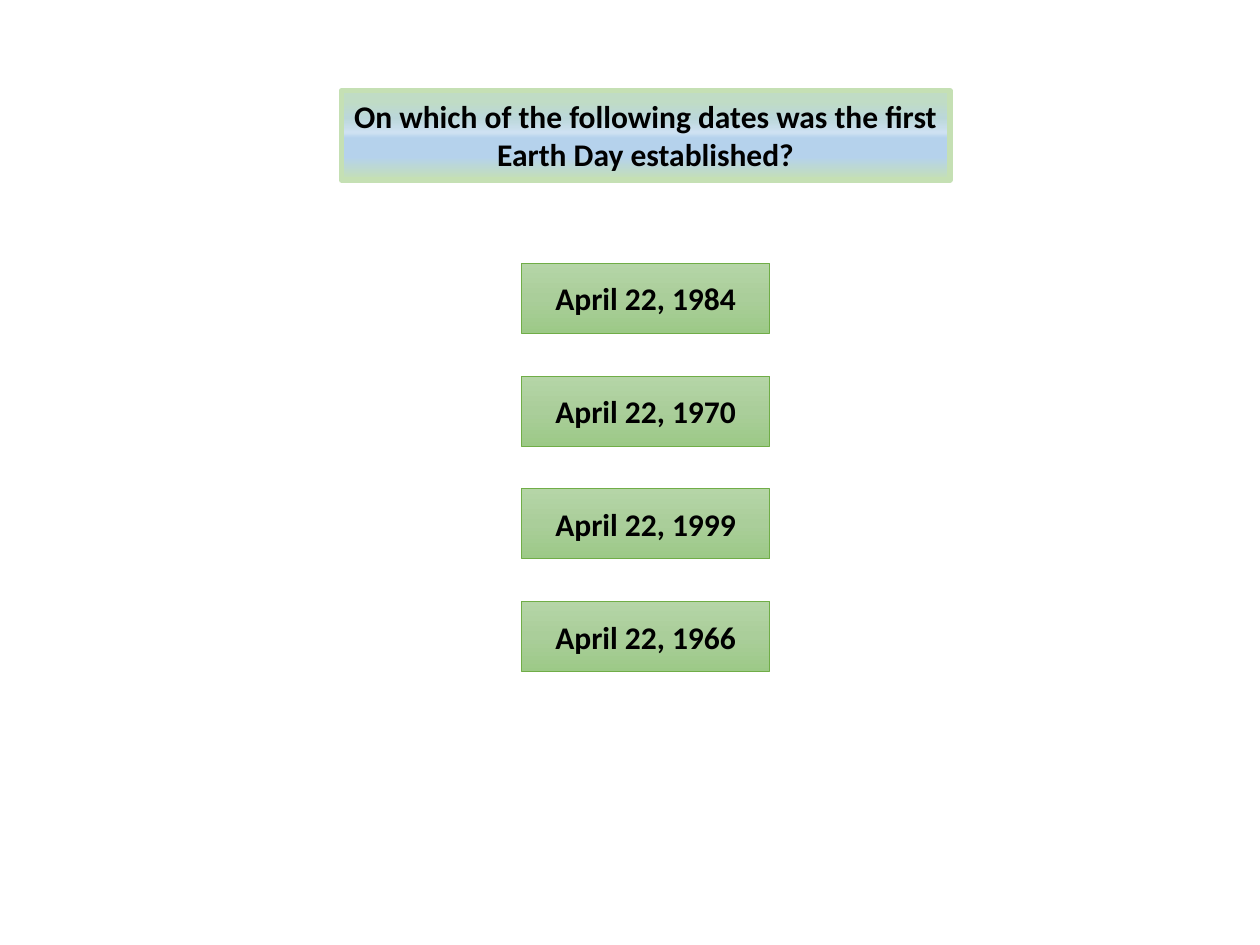
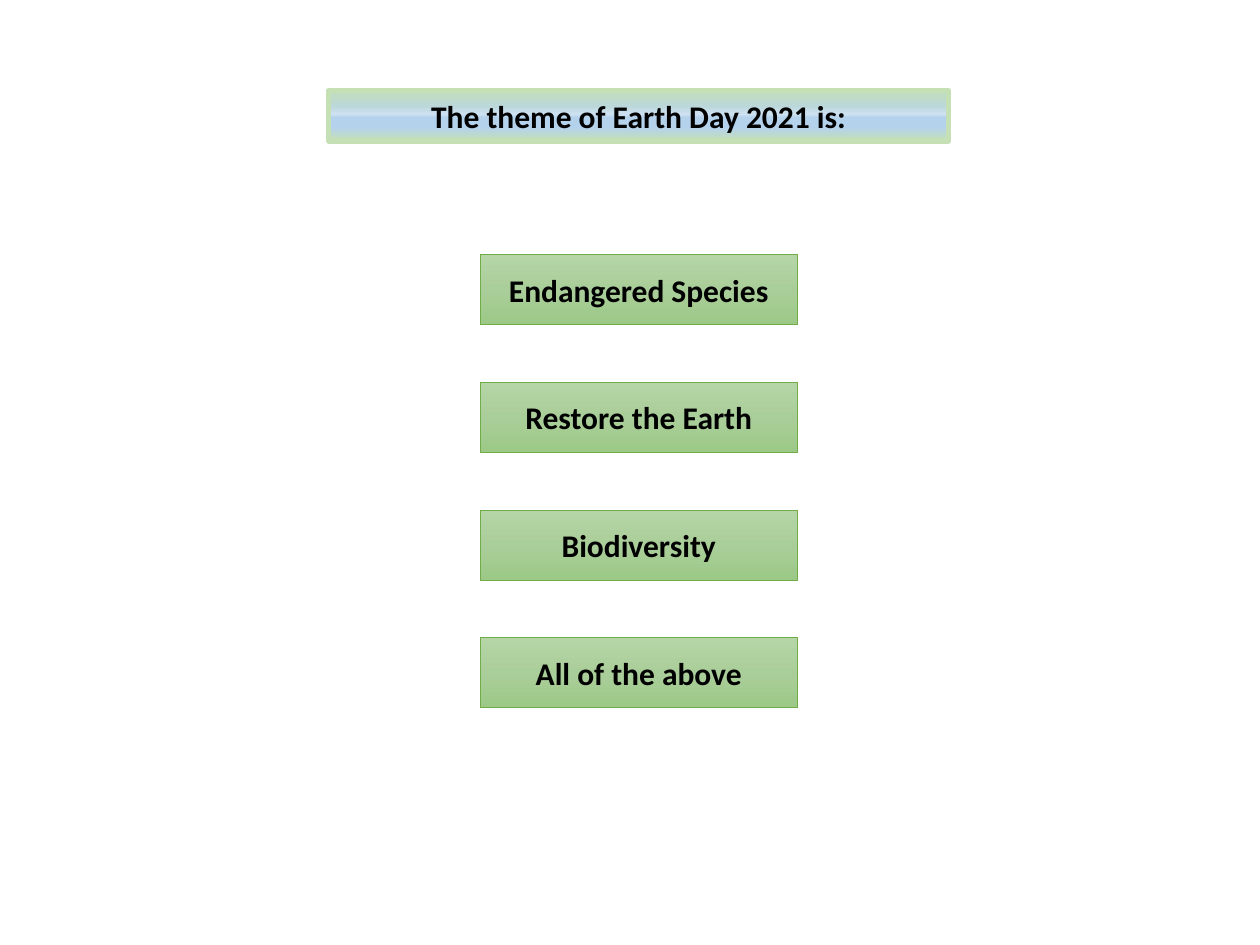
from lxml import etree
from pptx import Presentation
from pptx.dml.color import RGBColor
from pptx.enum import shapes, text
from pptx.oxml.ns import qn
from pptx.util import Pt

# Content: each question with its place and its column of answers
QUIZ = [
    {
        "question": "On which of the following dates was the first Earth Day established?",
        "question_box": (195.12, 51.84, 347.76, 51.12),
        "answers": ["April 22, 1984", "April 22, 1970", "April 22, 1999", "April 22, 1966"],
        "answer_left": 298.08, "answer_top": 150.48, "answer_width": 141.84, "answer_step": 64.4,
    },
    {
        "question": "The theme of Earth Day 2021 is:",
        "question_box": (187.92, 51.84, 354.24, 28.8),
        "answers": ["Endangered Species", "Restore the Earth", "Biodiversity", "All of the above"],
        "answer_left": 274.32, "answer_top": 145.44, "answer_width": 181.44, "answer_step": 73,
    },
]

# Shared style
FONT_NAME = "Calibri"
FONT_SIZE = 18
ANSWER_HEIGHT = 40
BLACK = RGBColor(0x00, 0x00, 0x00)
GREEN = RGBColor(0x70, 0xAD, 0x47)
PALE_GREEN = RGBColor(0xC5, 0xE0, 0xB4)
SKY = RGBColor(0xB5, 0xD2, 0xEC)
ANSWER_STOPS = [
    (0, RGBColor(0xB5, 0xD5, 0xA7)),
    (50, RGBColor(0xAA, 0xCE, 0x9A)),
    (100, RGBColor(0x9C, 0xC9, 0x87)),
]
QUESTION_STOPS = [
    (12, RGBColor(0xC0, 0xDC, 0xC5)),
    (30, RGBColor(0xBB, 0xD7, 0xD9)),
    (47, RGBColor(0xCE, 0xE1, 0xF2)),
    (53, SKY),
    (74, SKY),
    (100, PALE_GREEN),
]


def fill_downwards(shape, stops):
    """Fill the shape with a gradient that runs from top to bottom."""
    shape.fill.gradient()
    shape.fill.gradient_angle = 270
    stop_list = shape._element.spPr.find(qn("a:gradFill")).find(qn("a:gsLst"))
    for old_stop in list(stop_list):
        stop_list.remove(old_stop)
    for percent, color in stops:
        stop = etree.SubElement(stop_list, qn("a:gs"), pos=str(percent * 1000))
        etree.SubElement(stop, qn("a:srgbClr"), val=str(color))


def add_box(slide, kind, box, wording, stops, line_color, line_width):
    """Add a gradient box with centred bold text."""
    shape = slide.shapes.add_shape(kind, *(Pt(length) for length in box))
    shape.shadow.inherit = False
    fill_downwards(shape, stops)
    shape.line.color.rgb = line_color
    shape.line.width = Pt(line_width)
    frame = shape.text_frame
    frame.word_wrap = True
    frame.vertical_anchor = text.MSO_ANCHOR.MIDDLE
    paragraph = frame.paragraphs[0]
    paragraph.alignment = text.PP_ALIGN.CENTER
    run = paragraph.add_run()
    run.text = wording
    run.font.name = FONT_NAME
    run.font.size = Pt(FONT_SIZE)
    run.font.bold = True
    run.font.color.rgb = BLACK
    return shape


def add_quiz_slide(presentation, quiz):
    slide = presentation.slides.add_slide(presentation.slide_layouts[6])

    # Answer buttons, evenly spaced down the column
    for row, answer in enumerate(quiz["answers"]):
        top = quiz["answer_top"] + row * quiz["answer_step"]
        box = (quiz["answer_left"], top, quiz["answer_width"], ANSWER_HEIGHT)
        add_box(slide, shapes.MSO_SHAPE.ACTION_BUTTON_CUSTOM, box, answer,
                ANSWER_STOPS, GREEN, 0.5)

    # Question band
    band = add_box(slide, shapes.MSO_SHAPE.RECTANGLE, quiz["question_box"],
                   quiz["question"], QUESTION_STOPS, PALE_GREEN, 3)
    band.text_frame.vertical_anchor = text.MSO_ANCHOR.TOP
    band.text_frame.auto_size = text.MSO_AUTO_SIZE.SHAPE_TO_FIT_TEXT


def main():
    presentation = Presentation()
    presentation.slide_width = Pt(720)
    presentation.slide_height = Pt(540)
    for quiz in QUIZ:
        add_quiz_slide(presentation, quiz)
    presentation.save("out.pptx")


if __name__ == "__main__":
    main()
